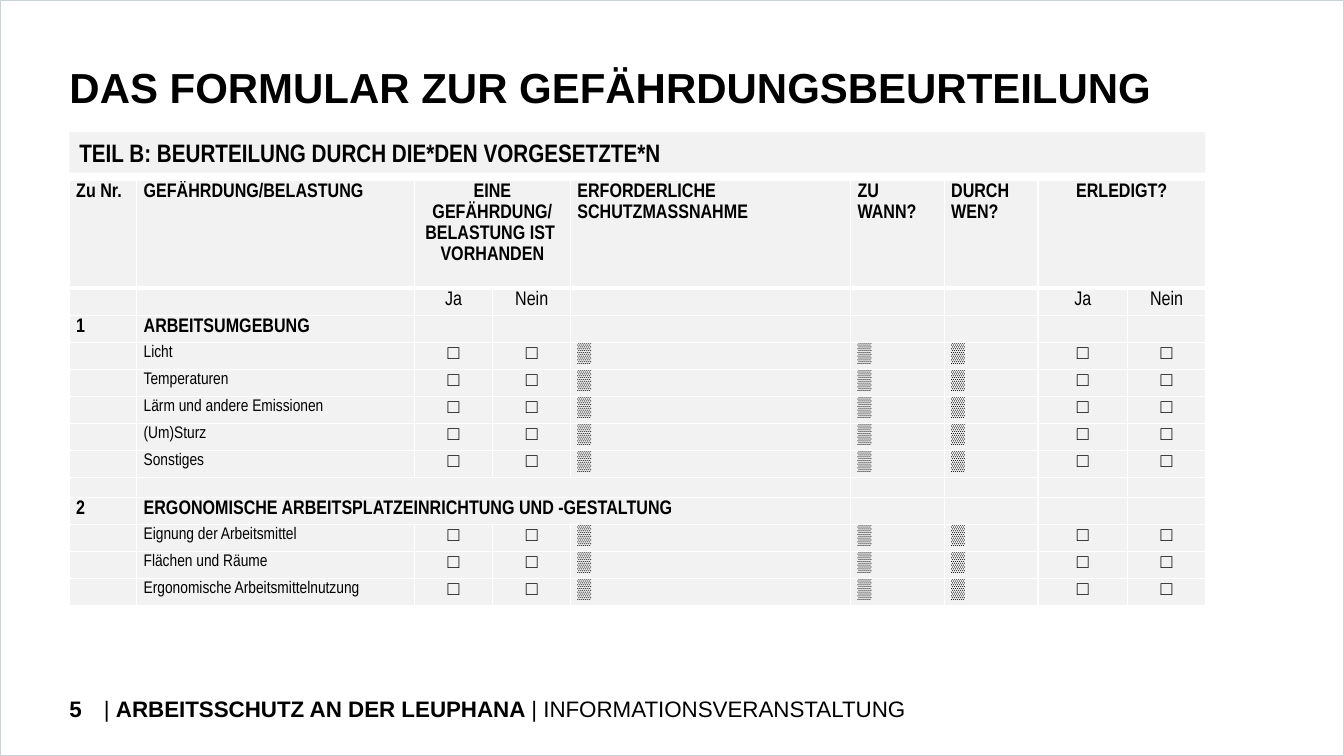
"""Build the slide with the risk assessment form, part B."""
from lxml import etree
from pptx import Presentation
from pptx.dml.color import RGBColor
from pptx.enum import shapes, text
from pptx.oxml.ns import qn
from pptx.util import Cm, Pt

INK = {"black": "000000", "grey": "F2F2F2", "white": "FFFFFF", "frame": "C9D2D5"}
LEFT, WIDE = 1.75, 28.63


def style(run, size, bold, face="Arial"):
    run.font.size, run.font.bold, run.font.name = Pt(size), bold, face
    run.font.color.rgb = RGBColor.from_string(INK["black"])


def label(left, top, width, height, parts, size):
    frame = slide.shapes.add_textbox(Cm(left), Cm(top), Cm(width), Cm(height)).text_frame
    frame.word_wrap = True
    frame.margin_left = frame.margin_right = 0
    frame.vertical_anchor = text.MSO_ANCHOR.MIDDLE
    for words, bold in parts:
        run = frame.paragraphs[0].add_run()
        run.text = words
        style(run, size, bold)


deck = Presentation()
deck.slide_width, deck.slide_height = Cm(33.87), Cm(19.05)
slide = deck.slides.add_slide(deck.slide_layouts[5])

edge = slide.shapes.add_shape(shapes.MSO_SHAPE.RECTANGLE, 0, 0, deck.slide_width, deck.slide_height)
edge.shadow.inherit = False
edge.fill.background()
edge.line.color.rgb = RGBColor.from_string(INK["frame"])
edge.line.width = Pt(1)

title = slide.shapes.title
title.left, title.top, title.width, title.height = Cm(LEFT), Cm(1.75), Cm(30.15), Cm(1.14)
frame = title.text_frame
frame.text = "DAS FORMULAR ZUR GEFÄHRDUNGSBEURTEILUNG"
frame.margin_left = frame.margin_top = frame.margin_right = frame.margin_bottom = 0
frame.vertical_anchor = text.MSO_ANCHOR.TOP
frame.auto_size = text.MSO_AUTO_SIZE.NONE
line = frame.paragraphs[0]
line.alignment, line.line_spacing = text.PP_ALIGN.LEFT, Pt(30)
style(line.runs[0], 30, True)

label(LEFT, 17.35, 0.86, 1.02, [("5", True)], 16)
label(2.62, 17.35, 24.5, 1.02, [("| ", False), ("ARBEITSSCHUTZ AN DER LEUPHANA ", True),
                                ("| INFORMATIONSVERANSTALTUNG", False)], 16)

band = slide.shapes.add_shape(shapes.MSO_SHAPE.RECTANGLE, Cm(LEFT), Cm(3.33), Cm(WIDE), Cm(1.02))
band.shadow.inherit = False
band.fill.solid()
band.fill.fore_color.rgb = RGBColor.from_string(INK["grey"])
band.line.fill.background()
band.text_frame.text = "TEIL B: BEURTEILUNG DURCH DIE*DEN VORGESETZTE*N"
band.text_frame.paragraphs[0].alignment = text.PP_ALIGN.LEFT
style(band.text_frame.paragraphs[0].runs[0], 18, True, "Arial Narrow")

BOX, GAP = "□", "▒"
checks = [BOX, BOX, GAP, GAP, GAP, BOX, BOX]
rows = [
    ["Zu Nr.", "GEFÄHRDUNG/BELASTUNG", "EINE GEFÄHRDUNG/\nBELASTUNG IST \nVORHANDEN", "",
     "ERFORDERLICHE SCHUTZMASSNAHME", "ZU WANN?", "DURCH WEN?", "ERLEDIGT?", ""],
    ["", "", "Ja", "Nein", "", "", "", "Ja", "Nein"],
    ["1", "ARBEITSUMGEBUNG"] + [""] * 7,
    *[["", risk] + checks for risk in
      ("Licht", "Temperaturen", "Lärm und andere Emissionen", "(Um)Sturz", "Sonstiges")],
    [""] * 9,
    ["2", "ERGONOMISCHE ARBEITSPLATZEINRICHTUNG UND -GESTALTUNG"] + [""] * 7,
    *[["", risk] + checks for risk in
      ("Eignung der Arbeitsmittel", "Flächen und Räume", "Ergonomische Arbeitsmittelnutzung")],
]
heads, blank, merged = (0, 2, 9), 8, [(0, 2, 3), (0, 7, 8), (8, 1, 4), (9, 1, 4)]
widths = [1.7, 6.99, 1.98, 1.96, 7.06, 2.36, 2.36, 2.26, 1.96]
tall = {0: 2.72, blank: 0.5}

form = slide.shapes.add_table(len(rows), len(widths), Cm(LEFT), Cm(4.54), Cm(WIDE), Cm(11.38)).table
for col, width in zip(form.columns, widths):
    col.width = Cm(width)
for r, row in enumerate(rows):
    form.rows[r].height = Cm(tall.get(r, 0.68))
    for c, words in enumerate(row):
        cell = form.cell(r, c)
        cell.margin_left = cell.margin_right = Cm(0.17)
        cell.margin_top = cell.margin_bottom = 0
        props = cell._tc.get_or_add_tcPr()
        for side in "LRTB":
            thick = (r, side) in ((0, "B"), (1, "T"))
            rule = etree.SubElement(props, qn("a:ln" + side), w=str(Pt(3 if thick else 1)))
            paint = etree.SubElement(rule, qn("a:solidFill"))
            etree.SubElement(paint, qn("a:srgbClr"), val=INK["white"])
        cell.fill.solid()
        cell.fill.fore_color.rgb = RGBColor.from_string(INK["grey"])
        cell.text_frame.text = words
        for line in cell.text_frame.paragraphs:
            line.line_spacing = 1.15
            if c in (2, 3, 7, 8):
                line.alignment = text.PP_ALIGN.CENTER
            for run in line.runs:
                small = c == 1 and r not in heads
                style(run, 12 if small else 14, r in heads, "Arial Narrow")
            if not words:
                etree.SubElement(line._p, qn("a:endParaRPr"), sz="800")
for r, first, last in merged:
    form.cell(r, first).merge(form.cell(r, last))

deck.save("out.pptx")
